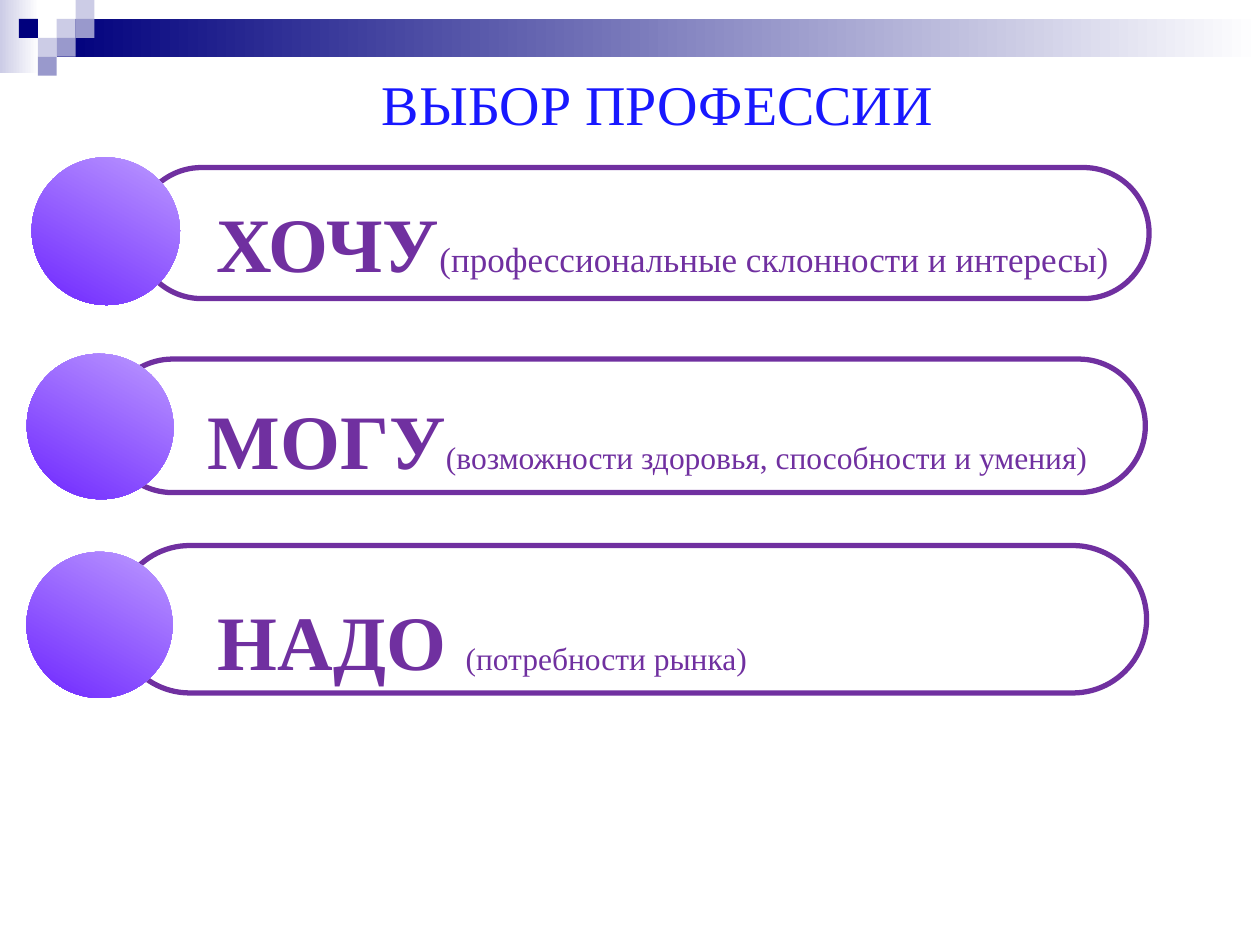
from dataclasses import dataclass

from pptx import Presentation
from pptx.dml.color import RGBColor
from pptx.enum import shapes, text
from pptx.util import Inches, Pt


@dataclass(frozen=True)
class Theme:
    font: str = "Times New Roman"
    navy: str = "00007D"
    mid: str = "9999CC"
    pale: str = "CCCCE6"
    white: str = "FFFFFF"
    blue: str = "1818FF"
    violet: str = "7030A0"
    light: str = "CAAFFF"
    deep: str = "6011FF"
    title: int = 32
    word: int = 44
    line: int = 3


THEME = Theme()
KIND = shapes.MSO_SHAPE
UNIT = 0.15


def rgb(code):
    return RGBColor.from_string(code)


def apply(item, form):
    for name, value in form.items():
        setattr(item, name, value)


def add_form(slide, kind, box):
    form = slide.shapes.add_shape(kind, *map(Inches, box))
    form.shadow.inherit = False
    form.line.fill.background()
    return form


def add_tile(slide, box, color):
    tile = add_form(slide, KIND.RECTANGLE, box)
    tile.fill.solid()
    tile.fill.fore_color.rgb = rgb(color)


def add_fade(slide, kind, box, colors, angle=0, turn=0):
    form = add_form(slide, kind, box)
    form.rotation = turn
    form.fill.gradient()
    form.fill.gradient_angle = angle
    for stop, color, place in zip(form.fill.gradient_stops, colors, (0, 1)):
        apply(stop, {"position": place})
        stop.color.rgb = rgb(color)


def add_pill(slide, box):
    pill = add_form(slide, KIND.ROUNDED_RECTANGLE, box)
    pill.adjustments[0] = 0.5
    pill.fill.background()
    pill.line.color.rgb = rgb(THEME.violet)
    pill.line.width = Pt(THEME.line)


def add_text(slide, box, runs, color, align, anchor):
    frame = slide.shapes.add_textbox(*map(Inches, box)).text_frame
    apply(frame, {"word_wrap": True, "vertical_anchor": anchor})
    para = frame.paragraphs[0]
    para.alignment = align
    for words, size, bold in runs:
        run = para.add_run()
        run.text = words
        apply(run.font, {"name": THEME.font, "size": Pt(size), "bold": bold})
        run.font.color.rgb = rgb(color)


def add_band(slide):
    add_fade(slide, KIND.RECTANGLE, (0, 0, 0.31, 0.58), (THEME.pale, THEME.white))
    add_fade(slide, KIND.RECTANGLE, (0.45, 0.15, 9.55, 0.3), (THEME.navy, THEME.white))
    tiles = [
        (3, 1, THEME.pale), (4, 0, THEME.pale), (4, 1, THEME.mid),
        (2, 2, THEME.pale), (1, 1, THEME.navy), (3, 2, THEME.mid),
        (2, 3, THEME.mid),
    ]
    for col, row, color in tiles:
        add_tile(slide, (col * UNIT, row * UNIT, UNIT, UNIT), color)


def add_row(slide, pill, ball, label, word, note, size):
    add_pill(slide, pill)
    add_fade(slide, KIND.OVAL, ball, (THEME.light, THEME.deep), 270, 29.3)
    runs = [(word, THEME.word, True), (note, size, False)]
    add_text(slide, label, runs, THEME.violet,
             text.PP_ALIGN.LEFT, text.MSO_ANCHOR.TOP)


def main():
    deck = Presentation()
    apply(deck, {"slide_width": Inches(10), "slide_height": Inches(7.5)})
    slide = deck.slides.add_slide(deck.slide_layouts[6])
    add_band(slide)
    add_text(slide, (0.72, 0.53, 9, 0.58), [("ВЫБОР ПРОФЕССИИ", THEME.title, False)],
             THEME.blue, text.PP_ALIGN.CENTER, text.MSO_ANCHOR.MIDDLE)
    rows = [
        ((1.08, 1.33, 8.04, 1.04), (0.25, 1.25, 1.18, 1.17), (1.62, 1.5, 7.4, 0.8),
         "ХОЧУ", "(профессиональные склонности и интересы)", 20),
        ((0.84, 2.85, 8.25, 1.06), (0.21, 2.81, 1.17, 1.15), (1.55, 3.07, 7.4, 0.8),
         "МОГУ", "(возможности здоровья, способности и умения)", 18),
        ((0.92, 4.33, 8.18, 1.17), (0.21, 4.38, 1.16, 1.16), (1.63, 4.66, 7.1, 0.8),
         "НАДО ", "(потребности рынка)", 18),
    ]
    for row in rows:
        add_row(slide, *row)
    deck.save("out.pptx")


if __name__ == "__main__":
    main()
